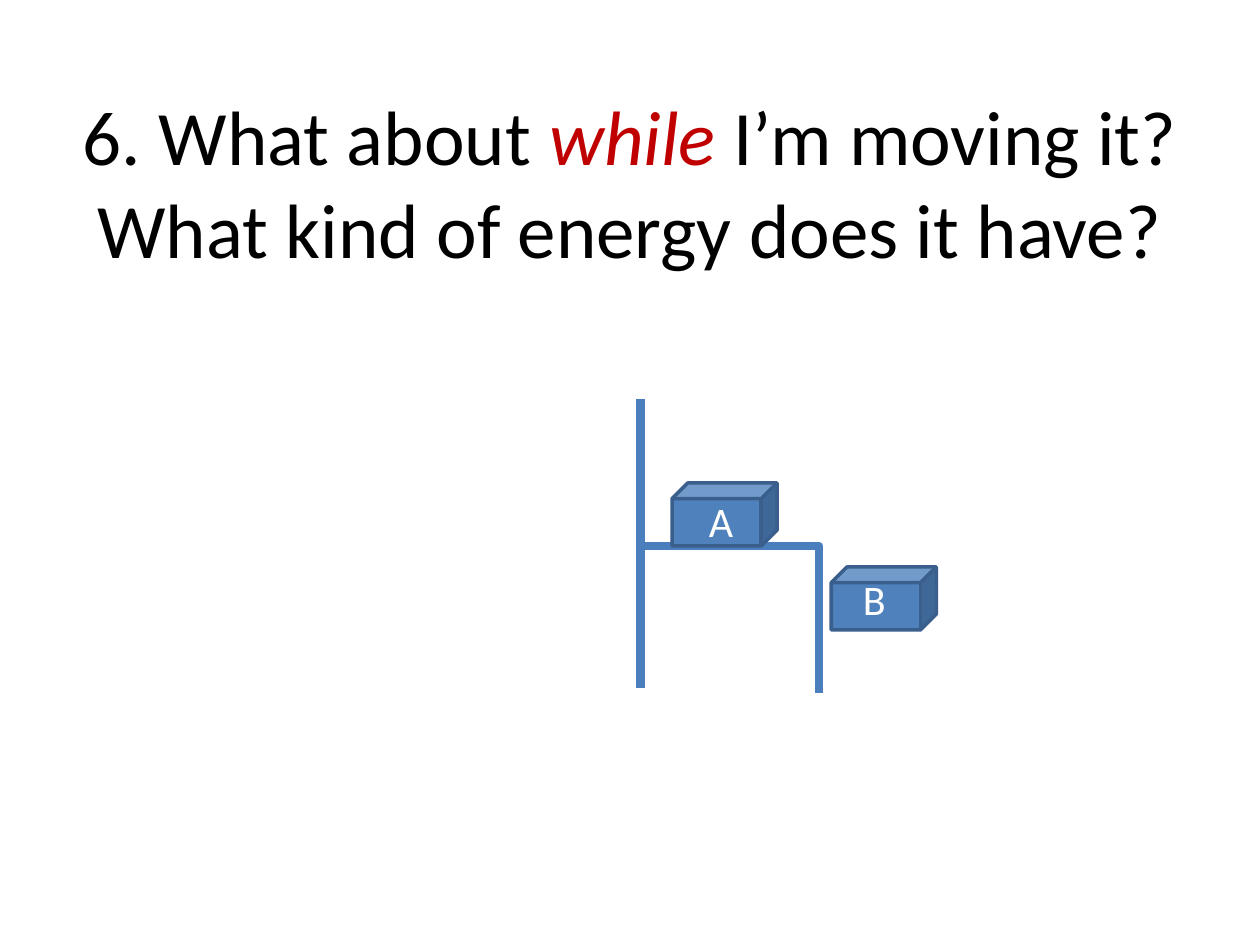
from typing import NamedTuple

from lxml import etree
from pptx import Presentation
from pptx.dml.color import RGBColor
from pptx.enum.shapes import MSO_CONNECTOR, MSO_SHAPE
from pptx.enum.text import MSO_ANCHOR, MSO_AUTO_SIZE, PP_ALIGN
from pptx.oxml.ns import qn
from pptx.util import Pt

CUBE = MSO_SHAPE.CUBE
STRAIGHT, ELBOW = MSO_CONNECTOR.STRAIGHT, MSO_CONNECTOR.ELBOW
MIDDLE, CENTER, GROW = MSO_ANCHOR.MIDDLE, PP_ALIGN.CENTER, MSO_AUTO_SIZE.SHAPE_TO_FIT_TEXT

BLACK = RGBColor(0x00, 0x00, 0x00)
WHITE = RGBColor(0xFF, 0xFF, 0xFF)
RED = RGBColor(0xC0, 0x00, 0x00)
BLUE = RGBColor(0x4F, 0x81, 0xBD)
EDGE = RGBColor(0x3A, 0x5F, 0x8C)
SHELF = RGBColor(0x4B, 0x7E, 0xBC)

BLOCK_W, BLOCK_H = 60, 36
LABEL_W, LABEL_H = 54, 36


class Block(NamedTuple):
    name: str
    x: float
    y: float
    label_x: float
    label_y: float


BLOCKS = [
    Block("B", 475, 324, 486, 324),
    Block("A", 384, 276, 398, 279.5),
]


def add_run(p, text: str, *, size: float, color: RGBColor, italic: bool = False):
    r = p.add_run()
    r.text = text
    r.font.name = "Calibri"
    r.font.size = Pt(size)
    r.font.color.rgb = color
    r.font.italic = italic
    return r


def add_line(s, kind, x1: float, y1: float, x2: float, y2: float):
    c = s.shapes.add_connector(kind, Pt(x1), Pt(y1), Pt(x2), Pt(y2))
    c.line.color.rgb = SHELF
    c.line.width = Pt(5)
    etree.SubElement(c._element.spPr, qn("a:effectLst"))
    return c


def add_cube(s, block: Block) -> None:
    sp = s.shapes.add_shape(CUBE, Pt(block.x), Pt(block.y), Pt(BLOCK_W), Pt(BLOCK_H))
    sp.shadow.inherit = False
    sp.fill.solid()
    sp.fill.fore_color.rgb = BLUE
    sp.line.color.rgb = EDGE
    sp.line.width = Pt(2)


def add_label(s, block: Block) -> None:
    sp = s.shapes.add_textbox(Pt(block.label_x), Pt(block.label_y), Pt(LABEL_W), Pt(LABEL_H))
    tf = sp.text_frame
    tf.word_wrap = True
    tf.auto_size = GROW
    add_run(tf.paragraphs[0], block.name, size=24, color=WHITE)


def main() -> None:
    prs = Presentation()
    prs.slide_width, prs.slide_height = Pt(720), Pt(540)
    s = prs.slides.add_slide(prs.slide_layouts[5])

    # Title
    title = s.shapes.title
    title.left, title.top, title.width, title.height = Pt(36), Pt(21.6), Pt(648), Pt(164)
    tf = title.text_frame
    tf.vertical_anchor = MIDDLE
    p = tf.paragraphs[0]
    p.alignment = CENTER
    add_run(p, "6. What about ", size=44, color=BLACK)
    add_run(p, "while", size=44, color=RED, italic=True)
    add_run(p, " I’m moving it?", size=44, color=BLACK)
    p.add_line_break()
    add_run(p, "What kind of energy does it have?", size=44, color=BLACK)

    # Shelf: an elbow turned to run down, across and down, plus the left leg
    elbow = add_line(s, ELBOW, 501, 261, 333, 363)
    elbow._element.spPr.find(qn("a:xfrm")).set("rot", str(270 * 60000))
    add_line(s, STRAIGHT, 366, 309.5, 366, 393)

    # Blocks, then their labels on top
    for block in BLOCKS:
        add_cube(s, block)
    for block in reversed(BLOCKS):
        add_label(s, block)

    prs.save("out.pptx")


if __name__ == "__main__":
    main()
